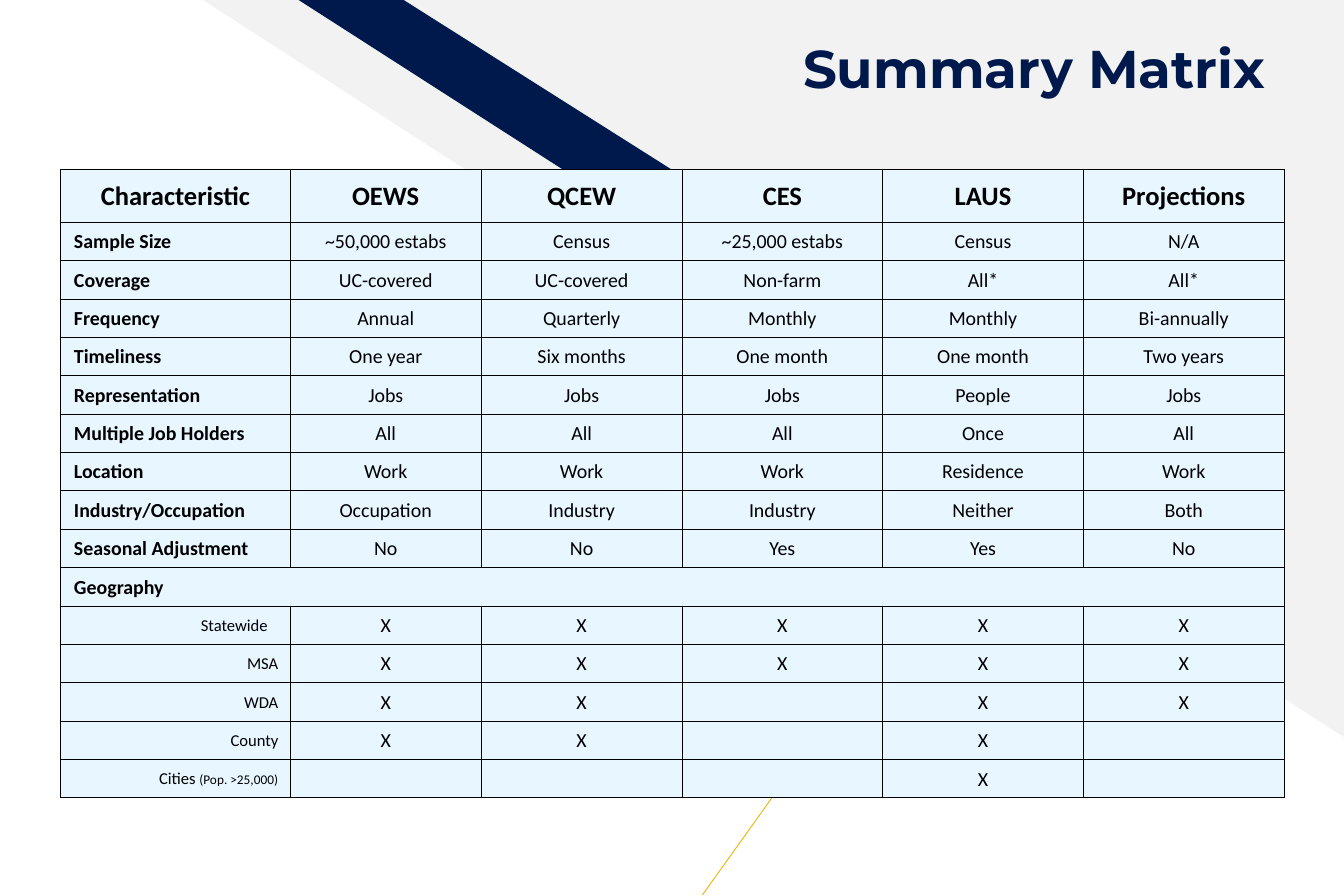
from lxml import etree
from pptx import Presentation
from pptx.dml.color import RGBColor
from pptx.enum.shapes import MSO_CONNECTOR, MSO_SHAPE
from pptx.enum.text import MSO_ANCHOR, PP_ALIGN
from pptx.oxml.ns import qn
from pptx.util import Inches, Pt

RIGHT_TRIANGLE = MSO_SHAPE.RIGHT_TRIANGLE
STRAIGHT = MSO_CONNECTOR.STRAIGHT
MIDDLE = MSO_ANCHOR.MIDDLE
LEFT, CENTER, RIGHT = PP_ALIGN.LEFT, PP_ALIGN.CENTER, PP_ALIGN.RIGHT

SLIDE_W, SLIDE_H = Inches(11.25), Inches(7.5)
NAVY, GOLD, GREY = "00194C", "EAB200", "F2F2F2"
ICE, BLACK = "E7F6FF", "000000"
BORDER_SIDES = ("a:lnL", "a:lnR", "a:lnT", "a:lnB")

COLUMN_SHARES = [1.92, 1.6, 1.68, 1.68, 1.68, 1.68]
HEADER_SHARE = 0.44 / 5.26

PROGRAMS = ["Characteristic", "OEWS", "QCEW", "CES", "LAUS", "Projections"]
TRAITS = [
    ["Sample Size", "~50,000 estabs", "Census", "~25,000 estabs", "Census", "N/A"],
    ["Coverage", "UC-covered", "UC-covered", "Non-farm", "All*", "All*"],
    ["Frequency", "Annual", "Quarterly", "Monthly", "Monthly", "Bi-annually"],
    ["Timeliness", "One year", "Six months", "One month", "One month", "Two years"],
    ["Representation", "Jobs", "Jobs", "Jobs", "People", "Jobs"],
    ["Multiple Job Holders", "All", "All", "All", "Once", "All"],
    ["Location", "Work", "Work", "Work", "Residence", "Work"],
    ["Industry/Occupation", "Occupation", "Industry", "Industry", "Neither", "Both"],
    ["Seasonal Adjustment", "No", "No", "Yes", "Yes", "No"],
    ["Geography", "", "", "", "", ""],
]
AREAS = [
    ["Statewide", "X", "X", "X", "X", "X"],
    ["MSA", "X", "X", "X", "X", "X"],
    ["WDA", "X", "X", "", "X", "X"],
    ["County", "X", "X", "", "X", ""],
    ["Cities ", "", "", "", "X", ""],
]


def across(percent):
    return round(SLIDE_W * percent / 100)


def down(percent):
    return round(SLIDE_H * percent / 100)


def color(hex_code):
    return RGBColor.from_string(hex_code)


def write_text(frame, text, size=12, bold=False, font="Calibri", ink=BLACK,
               align=CENTER, spacing=None):
    paragraph = frame.paragraphs[0]
    paragraph.alignment = align
    if spacing:
        paragraph.line_spacing = spacing
    run = paragraph.add_run()
    run.text = text
    run.font.size = Pt(size)
    run.font.bold = bold
    run.font.name = font
    run.font.color.rgb = color(ink)


def paint(shape, fill):
    shape.shadow.inherit = False
    shape.fill.solid()
    shape.fill.fore_color.rgb = color(fill)
    shape.line.fill.background()


def add_corner(slide):
    corner = slide.shapes.add_shape(RIGHT_TRIANGLE, across(15.11), 0,
                                    across(84.89), down(82.27))
    corner.rotation = 180
    paint(corner, GREY)


def add_band(slide):
    start, *others = [(across(x), down(y)) for x, y in
                      [(50.13, 19.07), (30.04, 0), (22.22, 0), (42.04, 19.07)]]
    builder = slide.shapes.build_freeform(*start)
    builder.add_line_segments(others, close=True)
    paint(builder.convert_to_shape(), NAVY)


def add_accent(slide):
    accent = slide.shapes.add_connector(STRAIGHT, across(52.27), down(99.87),
                                        across(64.8), down(73.6))
    accent.line.color.rgb = color(GOLD)
    accent.line.width = Pt(0.5)
    etree.SubElement(accent.element.spPr, qn("a:effectLst"))


def add_title(slide):
    frame = slide.shapes.add_textbox(across(36), down(3.07),
                                     across(59.02), down(9.07)).text_frame
    frame.word_wrap = True
    frame.vertical_anchor = MIDDLE
    frame.margin_bottom = 0
    write_text(frame, "Summary Matrix", size=32, bold=True, font="Montserrat",
               ink=NAVY, align=RIGHT, spacing=0.9)


def style_cell(cell, left=0.01, right=0.01):
    cell.vertical_anchor = MIDDLE
    cell.margin_left, cell.margin_right = Inches(left), Inches(right)
    cell.margin_top, cell.margin_bottom = Inches(0.01), 0
    properties = cell._tc.get_or_add_tcPr()
    for side in BORDER_SIDES:
        border = etree.SubElement(properties, qn(side), w=str(Pt(0.5)))
        ink = etree.SubElement(border, qn("a:solidFill"))
        etree.SubElement(ink, qn("a:srgbClr"), val=BLACK)
    cell.fill.solid()
    cell.fill.fore_color.rgb = color(ICE)


def fill_row(table, row, texts, label_style, value_style, left=0.01, right=0.01):
    for column, text in enumerate(texts):
        cell = table.cell(row, column)
        if column:
            style_cell(cell)
        else:
            style_cell(cell, left, right)
        if text:
            write_text(cell.text_frame, text, **(value_style if column else label_style))


def add_matrix(slide):
    row_count = 1 + len(TRAITS) + len(AREAS)
    width, height = across(91.02), down(70.13)
    table = slide.shapes.add_table(row_count, len(PROGRAMS), across(4.53),
                                   down(18.93), width, height).table
    table.first_row = table.horz_banding = False
    for column, share in zip(table.columns, COLUMN_SHARES):
        column.width = round(width * share / sum(COLUMN_SHARES))
    header_height = round(height * HEADER_SHARE)
    for index, row in enumerate(table.rows):
        row.height = (height - header_height) // (row_count - 1) if index else header_height

    heading = {"size": 16, "bold": True}
    fill_row(table, 0, PROGRAMS, heading, heading)
    for row, texts in enumerate(TRAITS, 1):
        fill_row(table, row, texts, {"bold": True, "align": LEFT}, {}, left=0.11)
    for row, texts in enumerate(AREAS, 1 + len(TRAITS)):
        fill_row(table, row, texts, {"size": 10, "align": RIGHT}, {},
                 right=0.19 if texts[0] == "Statewide" else 0.1)
    write_text(table.cell(row_count - 1, 0).text_frame, "(Pop. >25,000)",
               size=8, align=RIGHT)
    geography = len(TRAITS)
    table.cell(geography, 0).merge(table.cell(geography, len(PROGRAMS) - 1))


def main():
    deck = Presentation()
    deck.slide_width, deck.slide_height = SLIDE_W, SLIDE_H
    slide = deck.slides.add_slide(deck.slide_layouts[6])
    add_corner(slide)
    add_band(slide)
    add_accent(slide)
    add_title(slide)
    add_matrix(slide)
    deck.save("out.pptx")


if __name__ == "__main__":
    main()
